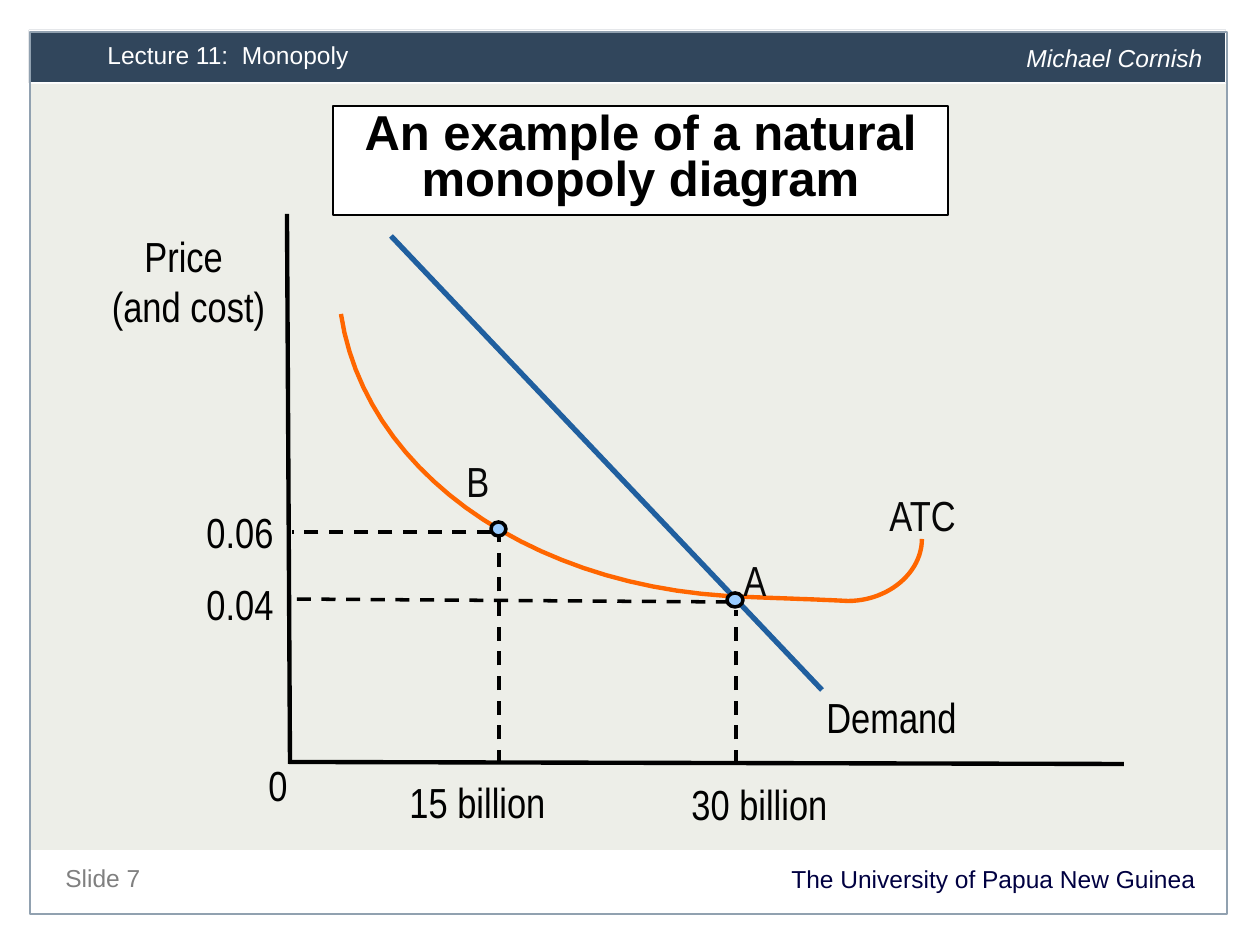
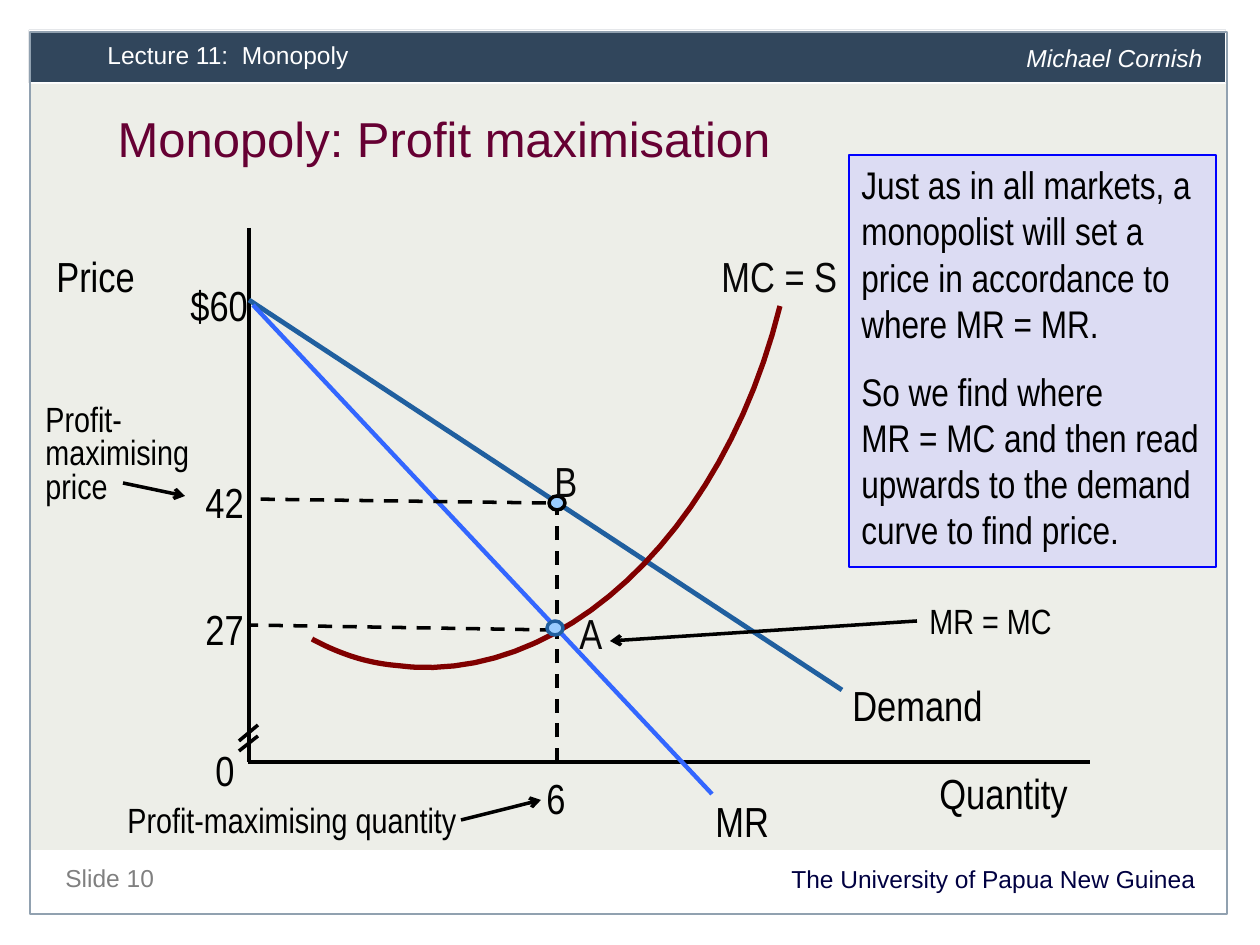
"""Build two lecture slides with monopoly diagrams."""
from dataclasses import dataclass

from lxml.etree import SubElement
from pptx import Presentation
from pptx.dml.color import RGBColor
from pptx.enum.dml import MSO_LINE
from pptx.enum.shapes import MSO_CONNECTOR, MSO_SHAPE
from pptx.enum.text import MSO_ANCHOR, MSO_AUTO_SIZE, PP_ALIGN
from pptx.oxml.ns import qn
from pptx.util import Emu, Pt

EMU_PER_PX = 914400 / 126
CURVE_STEPS = 24
SANS, NARROW = "Arial", "Arial Narrow"
COLORS = {
    "canvas": "EDEEE8", "band": "31465C", "white": "FFFFFF", "frame": "91A1B0",
    "university": "000041", "number": "808080", "heading": "660033",
    "ink": "000000", "mark": "080808", "demand": "205F9F", "revenue": "3366FF",
    "average_cost": "FF6600", "marginal_cost": "800000", "point": "99CCFF",
    "note": "CCCCFF", "note_edge": "0000FF",
}


@dataclass(frozen=True)
class Style:
    size: int = 24
    color: str = "ink"
    font: str = NARROW
    spacing: float | Pt | None = None
    align: PP_ALIGN = PP_ALIGN.LEFT
    bold: bool = False
    italic: bool = False


@dataclass(frozen=True)
class Box:
    left: int
    top: int
    width: int
    height: int = 52


@dataclass(frozen=True)
class Label:
    text: str
    box: Box
    style: Style = Style()


@dataclass(frozen=True)
class Stroke:
    start: tuple[int, int]
    end: tuple[int, int]
    color: str = "ink"
    width: float = 2
    dashed: bool = False
    arrow: bool = False


@dataclass(frozen=True)
class Curve:
    knots: tuple[tuple[int, int], ...]
    color: str
    width: float


@dataclass(frozen=True)
class Point:
    box: Box
    edge: str = "ink"


@dataclass(frozen=True)
class Diagram:
    strokes: tuple[Stroke, ...]
    curve: Curve
    points: tuple[Point, ...]
    labels: tuple[Label, ...]


MARK = Style(color="mark")
CENTERED = Style(align=PP_ALIGN.CENTER)
REMARK = Style(size=20, spacing=0.8)
NOTE = Style(size=22)
LECTURE = Style(14, "white", SANS, Pt(18))
AUTHOR = Style(14, "white", SANS, Pt(18), italic=True)
UNIVERSITY = Style(14, "university", SANS, Pt(15), PP_ALIGN.RIGHT)
NUMBER = Style(14, "number", SANS, Pt(20))
BOXED_TITLE = Style(28, "ink", SANS, Pt(26), PP_ALIGN.CENTER, bold=True)
PLAIN_TITLE = Style(28, "heading", SANS, Pt(26))


def px(length: float) -> Emu:
    return Emu(round(length * EMU_PER_PX))


def place(box: Box) -> tuple[Emu, ...]:
    return px(box.left), px(box.top), px(box.width), px(box.height)


def rgb(name: str) -> RGBColor:
    return RGBColor.from_string(COLORS[name])


def outline(line, color: str, width: float) -> None:
    line.color.rgb = rgb(color)
    line.width = Pt(width)


def write(frame, text: str, style: Style, gaps: dict[int, float] | None = None) -> None:
    frame.word_wrap = True
    frame.auto_size = MSO_AUTO_SIZE.NONE
    for index, words in enumerate(text.split("\n")):
        paragraph = frame.add_paragraph() if index else frame.paragraphs[0]
        paragraph.alignment = style.align
        paragraph.line_spacing = style.spacing
        if gaps and index in gaps:
            paragraph.space_before = Pt(gaps[index])
        run = paragraph.add_run()
        run.text = words
        run.font.name = style.font
        run.font.size = Pt(style.size)
        run.font.bold = style.bold
        run.font.italic = style.italic
        run.font.color.rgb = rgb(style.color)


def draw_label(slide, label: Label) -> None:
    write(slide.shapes.add_textbox(*place(label.box)).text_frame, label.text, label.style)


def draw_shape(slide, kind: MSO_SHAPE, box: Box, fill: str | None,
               edge: str | None = None, width: float = 0.75):
    shape = slide.shapes.add_shape(kind, *place(box))
    shape.shadow.inherit = False
    if fill:
        shape.fill.solid()
        shape.fill.fore_color.rgb = rgb(fill)
    else:
        shape.fill.background()
    if edge:
        outline(shape.line, edge, width)
    else:
        shape.line.fill.background()
    return shape


def draw_stroke(slide, stroke: Stroke) -> None:
    ends = [px(value) for value in stroke.start + stroke.end]
    connector = slide.shapes.add_connector(MSO_CONNECTOR.STRAIGHT, *ends)
    outline(connector.line, stroke.color, stroke.width)
    if stroke.dashed:
        connector.line.dash_style = MSO_LINE.DASH
    properties = connector._element.spPr
    if stroke.arrow:
        SubElement(properties.find(qn("a:ln")), qn("a:tailEnd"), type="arrow")
    SubElement(properties, qn("a:effectLst"))


def bezier(knots: tuple[tuple[int, int], ...], t: float) -> tuple[Emu, Emu]:
    weights = ((1 - t) ** 3, 3 * t * (1 - t) ** 2, 3 * t * t * (1 - t), t ** 3)
    x, y = (px(sum(w * v for w, v in zip(weights, axis))) for axis in zip(*knots))
    return x, y


def draw_curve(slide, curve: Curve) -> None:
    trail = [bezier(curve.knots[first:first + 4], step / CURVE_STEPS)
             for first in range(0, len(curve.knots) - 1, 3)
             for step in range(1, CURVE_STEPS + 1)]
    x, y = curve.knots[0]
    builder = slide.shapes.build_freeform(px(x), px(y))
    builder.add_line_segments(trail, close=False)
    shape = builder.convert_to_shape()
    shape.shadow.inherit = False
    shape.fill.background()
    outline(shape.line, curve.color, curve.width)


def draw_diagram(slide, diagram: Diagram) -> None:
    for stroke in diagram.strokes:
        draw_stroke(slide, stroke)
    draw_curve(slide, diagram.curve)
    for point in diagram.points:
        draw_shape(slide, MSO_SHAPE.OVAL, point.box, "point", point.edge, 2)
    for label in diagram.labels:
        draw_label(slide, label)


def draw_note(slide, text: str, box: Box) -> None:
    note = draw_shape(slide, MSO_SHAPE.RECTANGLE, box, "note", "note_edge")
    tint = note._element.spPr.find(qn("a:solidFill"))[0]
    SubElement(tint, qn("a:alpha"), val="50000")
    note.text_frame.vertical_anchor = MSO_ANCHOR.TOP
    write(note.text_frame, text, NOTE, {1: 12.5})


def start_slide(deck, number: int, heading: Label, anchor: MSO_ANCHOR):
    slide = deck.slides.add_slide(deck.slide_layouts[5])
    draw_shape(slide, MSO_SHAPE.RECTANGLE, Box(31, 84, 1196, 766), "canvas")
    draw_shape(slide, MSO_SHAPE.RECTANGLE, Box(29, 30, 1197, 53), "band", "white", 0.5)
    for label in (
        Label("The University of Papua New Guinea", Box(53, 861, 1155, 40), UNIVERSITY),
        Label(f"Slide {number}", Box(53, 851, 546, 43), NUMBER),
        Label("Lecture 11:  Monopoly", Box(95, 32, 772, 47), LECTURE),
        Label("Michael Cornish", Box(1014, 35, 207, 47), AUTHOR),
    ):
        draw_label(slide, label)
    draw_shape(slide, MSO_SHAPE.RECTANGLE, Box(30, 32, 1197, 882), None, "frame")
    title = slide.shapes.title
    title.left, title.top, title.width, title.height = place(heading.box)
    title.text_frame.vertical_anchor = anchor
    write(title.text_frame, heading.text, heading.style)
    slide.shapes._spTree.append(title._element)
    return slide


NATURAL_MONOPOLY = Diagram(
    strokes=(
        Stroke((287, 214), (290, 764), width=2.5),
        Stroke((289, 762), (1124, 764), width=2.5),
        Stroke((391, 236), (822, 690), "demand", 3),
        Stroke((736, 764), (736, 610), dashed=True),
        Stroke((730, 602), (290, 599), dashed=True),
        Stroke((499, 764), (499, 523), dashed=True),
        Stroke((491, 532), (292, 532), dashed=True),
    ),
    curve=Curve(((341, 314), (364, 467), (522, 583), (727, 596), (767, 598),
                 (808, 599), (848, 601), (888, 601), (922, 573), (922, 539)),
                "average_cost", 2.5),
    points=(Point(Box(727, 593, 16, 14)), Point(Box(491, 522, 15, 14))),
    labels=(
        Label("Price \n(and cost)", Box(74, 224, 229, 115), CENTERED),
        Label("Demand", Box(814, 685, 266)),
        Label("0", Box(256, 753, 32)),
        Label("0.06", Box(194, 500, 129)),
        Label("0.04", Box(194, 572, 129)),
        Label("30 billion", Box(679, 772, 189)),
        Label("15 billion", Box(397, 770, 221)),
        Label("ATC", Box(877, 483, 146), MARK),
        Label("B", Box(454, 449, 45), MARK),
        Label("A", Box(731, 548, 45), MARK),
    ),
)

PROFIT_MAXIMISATION = Diagram(
    strokes=(
        Stroke((249, 228), (249, 762), width=2.5),
        Stroke((248, 762), (1090, 762), width=2.5),
        Stroke((249, 300), (842, 690), "demand", 2.75),
        Stroke((253, 305), (712, 794), "revenue", 2.5),
        Stroke((557, 762), (557, 503), dashed=True),
        Stroke((546, 503), (249, 499), dashed=True),
        Stroke((554, 630), (249, 625), dashed=True),
        Stroke((258, 736), (239, 751)),
        Stroke((258, 725), (239, 741)),
        Stroke((461, 820), (541, 800), arrow=True),
        Stroke((123, 483), (185, 496), arrow=True),
        Stroke((917, 621), (610, 641), arrow=True),
    ),
    curve=Curve(((780, 306), (723, 536), (558, 689), (392, 665),
                 (364, 662), (338, 653), (312, 639)), "marginal_cost", 3),
    points=(Point(Box(549, 496, 16, 14)), Point(Box(547, 621, 16, 14), "demand")),
    labels=(
        Label("Price", Box(44, 244, 129, 63)),
        Label("Quantity", Box(927, 761, 183)),
        Label("Demand", Box(840, 673, 166, 63)),
        Label("MR", Box(703, 789, 130)),
        Label("0", Box(203, 738, 47)),
        Label("MC = S", Box(709, 244, 147, 63), MARK),
        Label("$60", Box(178, 273, 105)),
        Label("42", Box(193, 470, 130)),
        Label("27", Box(193, 597, 67)),
        Label("6", Box(534, 766, 48)),
        Label("B", Box(542, 449, 47), MARK),
        Label("A", Box(567, 601, 47), MARK),
        Label("Profit-maximising quantity", Box(115, 800, 373, 47), REMARK),
        Label("Profit-\nmaximising\nprice", Box(33, 399, 180, 115), REMARK),
        Label("MR = MC", Box(917, 601, 159, 47), REMARK),
    ),
)


def main() -> None:
    deck = Presentation()
    deck.slide_width, deck.slide_height = px(1260), px(945)

    example = Label("An example of a natural monopoly diagram",
                    Box(333, 106, 615, 109), BOXED_TITLE)
    slide = start_slide(deck, 7, example, MSO_ANCHOR.MIDDLE)
    title = slide.shapes.title
    title.fill.solid()
    title.fill.fore_color.rgb = rgb("white")
    outline(title.line, "ink", 0.75)
    draw_diagram(slide, NATURAL_MONOPOLY)

    profit = Label("Monopoly: Profit maximisation", Box(105, 116, 1024, 95), PLAIN_TITLE)
    slide = start_slide(deck, 10, profit, MSO_ANCHOR.TOP)
    draw_diagram(slide, PROFIT_MAXIMISATION)
    draw_note(slide, "Just as in all markets, a monopolist will set a price in accordance "
              "to where MR = MR.\nSo we find where\nMR = MC and then read upwards to the "
              "demand curve to find price.", Box(849, 155, 367, 412))
    deck.save("out.pptx")


if __name__ == "__main__":
    main()
